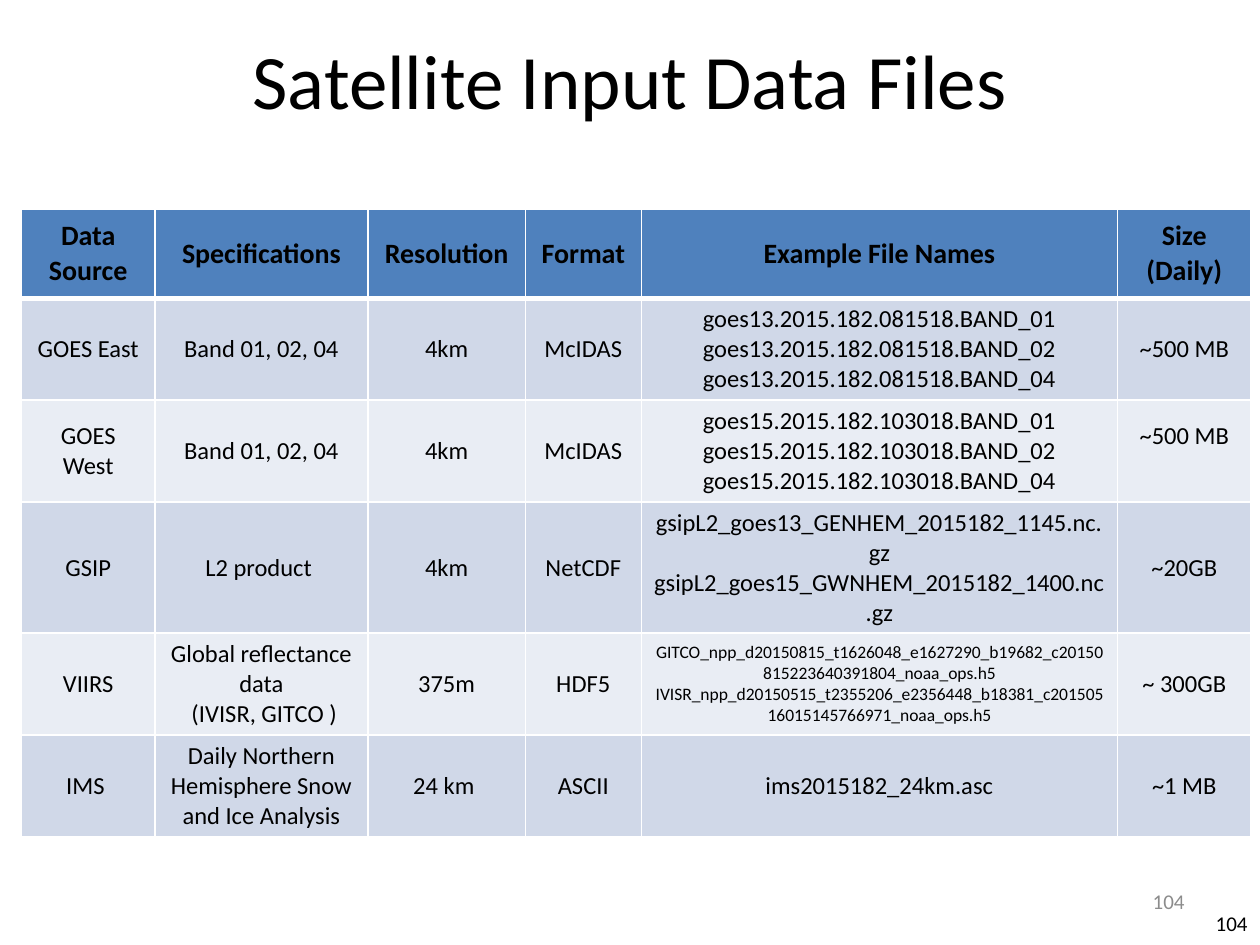
import lxml.etree
import pptx
import pptx.dml.color
import pptx.enum.text
import pptx.oxml.ns
import pptx.util

COLOURS = {
    "ink": "000000", "muted": "8C8C8C", "header": "4F81BD",
    "band": "D0D8E8", "light": "E9EDF4", "rule": "FFFFFF",
}
ALIGN = pptx.enum.text.PP_ALIGN
MIDDLE = pptx.enum.text.MSO_ANCHOR.MIDDLE
SLIDE_WIDTH, SLIDE_HEIGHT = pptx.util.Inches(10), pptx.util.Inches(7.5)

# Boxes are left, top, width, height as shares of the slide
TITLE_BOX = (0.05, 0, 0.9, 1 / 6)
TABLE_BOX = (0.017, 0.221, 0.976, 0.665)
CORNER_NUMBER_BOX = (0.925, 0.95, 0.075, 0.053)
FOOTER_NUMBER_BOX = (0.717, 0.927, 0.233, 0.053)

# Relative column widths and row heights
COLUMNS = [1.06, 1.69, 1.25, 0.92, 3.78, 1.06]
ROWS = [0.71, 0.81, 0.81, 1.04, 0.81, 0.81]
FILES_COLUMN, SIZE_COLUMN = 4, 5
WEST_ROW, VIIRS_ROW = 2, 4

DATA_FILES = [
    ["Data Source", "Specifications", "Resolution", "Format",
     "Example File Names", "Size\n(Daily)"],
    ["GOES East", "Band 01, 02, 04", "4km", "McIDAS",
     "goes13.2015.182.081518.BAND_01\n"
     "goes13.2015.182.081518.BAND_02\n"
     "goes13.2015.182.081518.BAND_04", "~500 MB"],
    ["GOES West", "Band 01, 02, 04", "4km", "McIDAS",
     "goes15.2015.182.103018.BAND_01\n"
     "goes15.2015.182.103018.BAND_02\n"
     "goes15.2015.182.103018.BAND_04", "~500 MB"],
    ["GSIP", "L2 product ", "4km", "NetCDF",
     "gsipL2_goes13_GENHEM_2015182_1145.nc.gz\n"
     "gsipL2_goes15_GWNHEM_2015182_1400.nc.gz", "~20GB"],
    ["VIIRS", "Global reflectance data\n (IVISR, GITCO )", "375m", "HDF5",
     "GITCO_npp_d20150815_t1626048_e1627290_b19682_c20150815223640391804_noaa_ops.h5\n"
     "IVISR_npp_d20150515_t2355206_e2356448_b18381_c20150516015145766971_noaa_ops.h5",
     "~ 300GB"],
    ["IMS ", "Daily Northern Hemisphere Snow and Ice Analysis", "24 km ",
     "ASCII", "ims2015182_24km.asc", "~1 MB"],
]


def rgb(name):
    return pptx.dml.color.RGBColor.from_string(COLOURS[name])


def to_lengths(box):
    left, top, width, height = box
    return (int(left * SLIDE_WIDTH), int(top * SLIDE_HEIGHT),
            int(width * SLIDE_WIDTH), int(height * SLIDE_HEIGHT))


def write_text(frame, text, size=14, colour="ink", bold=False, align=ALIGN.CENTER):
    frame.text = text
    for paragraph in frame.paragraphs:
        paragraph.alignment = align
        for run in paragraph.runs:
            run.font.name = "Calibri"
            run.font.size = pptx.util.Pt(size)
            run.font.bold = bold
            run.font.color.rgb = rgb(colour)


def add_title(slide, box):
    title = slide.shapes.title
    title.left, title.top, title.width, title.height = to_lengths(box)
    title.text_frame.vertical_anchor = MIDDLE
    write_text(title.text_frame, "Satellite Input Data Files", size=44)


def add_page_number(slide, box, colour):
    number = slide.shapes.add_textbox(*to_lengths(box)).text_frame
    number.word_wrap = True
    number.vertical_anchor = MIDDLE
    write_text(number, "104", size=12, colour=colour, align=ALIGN.RIGHT)


def set_borders(cell, **widths):
    """Draw the cell's sides, each given as L, R, T or B with a width in points."""
    qn = pptx.oxml.ns.qn
    properties = cell._tc.get_or_add_tcPr()
    for side, width in widths.items():
        line = lxml.etree.SubElement(properties, qn(f"a:ln{side}"),
                                     w=str(pptx.util.Pt(width)))
        fill = lxml.etree.SubElement(line, qn("a:solidFill"))
        lxml.etree.SubElement(fill, qn("a:srgbClr"), val=COLOURS["rule"])


def add_data_table(slide, box):
    left, top, width, height = to_lengths(box)
    table = slide.shapes.add_table(len(ROWS), len(COLUMNS),
                                   left, top, width, height).table
    for column, share in zip(table.columns, COLUMNS):
        column.width = int(width * share / sum(COLUMNS))
    for row, share in zip(table.rows, ROWS):
        row.height = int(height * share / sum(ROWS))

    for r, texts in enumerate(DATA_FILES):
        is_header = r == 0
        fill = "header" if is_header else "band" if r % 2 else "light"
        for c, text in enumerate(texts):
            cell = table.cell(r, c)
            set_borders(cell, L=1, R=1, T=3 if r == 1 else 1, B=3 if is_header else 1)
            cell.fill.solid()
            cell.fill.fore_color.rgb = rgb(fill)
            cell.vertical_anchor = MIDDLE
            long_names = (r, c) == (VIIRS_ROW, FILES_COLUMN)
            write_text(cell.text_frame, text, bold=is_header,
                       size=16 if is_header else 10 if long_names else 14)

    # The size of GOES West sits half a line above the middle
    table.cell(WEST_ROW, SIZE_COLUMN).margin_bottom = pptx.util.Inches(0.29)


def main():
    presentation = pptx.Presentation()
    presentation.slide_width, presentation.slide_height = SLIDE_WIDTH, SLIDE_HEIGHT
    slide = presentation.slides.add_slide(presentation.slide_layouts[5])
    add_page_number(slide, CORNER_NUMBER_BOX, "ink")
    add_title(slide, TITLE_BOX)
    add_data_table(slide, TABLE_BOX)
    add_page_number(slide, FOOTER_NUMBER_BOX, "muted")
    presentation.save("out.pptx")


if __name__ == "__main__":
    main()
